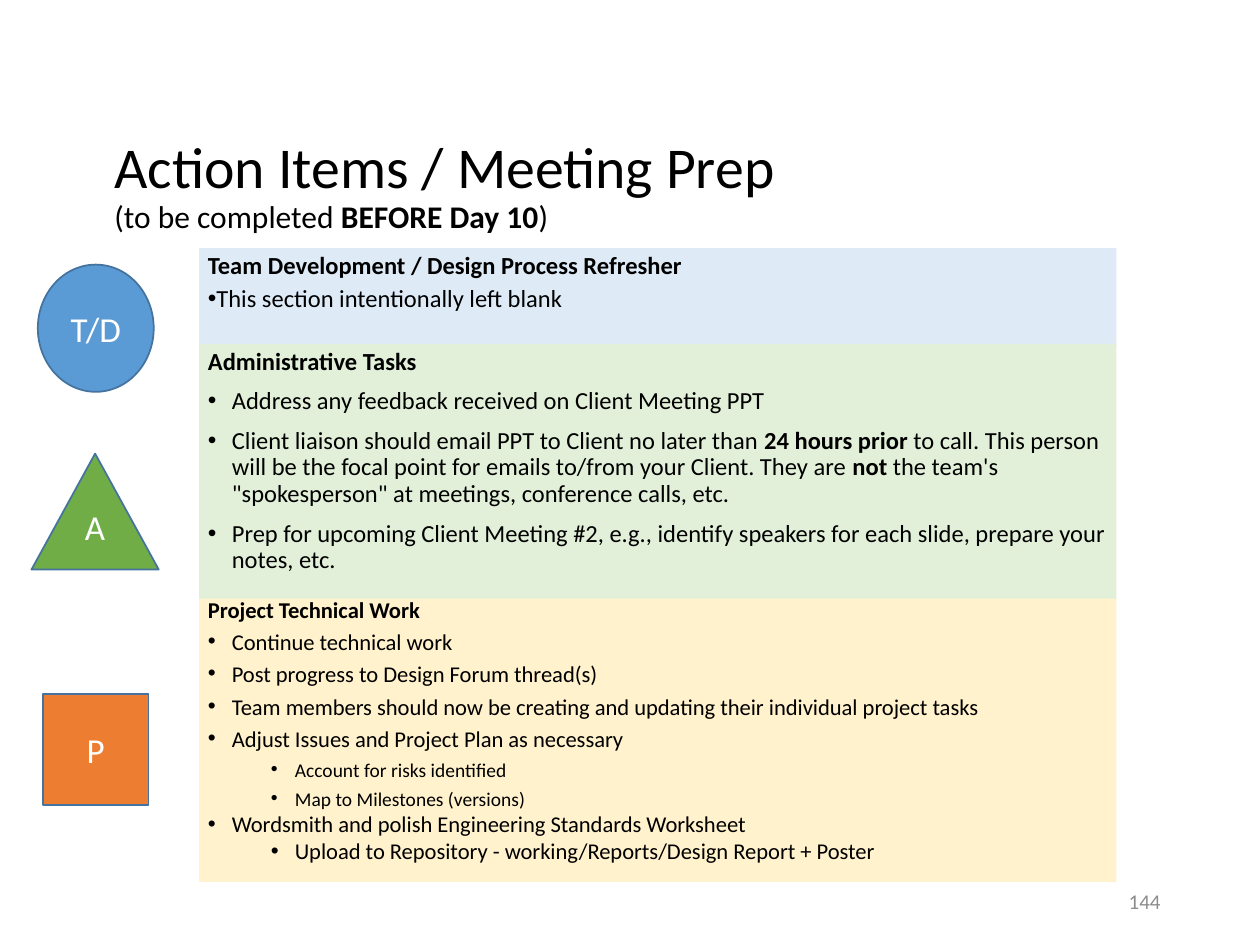
from lxml.etree import SubElement
from pptx import Presentation
from pptx.dml.color import RGBColor
from pptx.enum.shapes import MSO_SHAPE as Shape
from pptx.enum.text import MSO_ANCHOR as Anchor, PP_ALIGN as Align
from pptx.oxml.ns import qn
from pptx.util import Inches, Pt

COLUMNS, ROWS = 100, 75
SIDE_LEFT, SIDE_WIDTH = 15.8, 72.8


def color(value):
    return RGBColor.from_string(value)


class SlideBuilder:
    """Holds the style and the current slide; places are grid columns and rows."""

    font = "Calibri"
    outline = "43739E"
    panel_insets = (0.07, 0.04, 0.07, 0.04)

    def __init__(self, deck):
        self.page = deck.slides.add_slide(deck.slide_layouts[6])
        self.column = deck.slide_width / COLUMNS
        self.row = deck.slide_height / ROWS

    def place(self, left, top, width, height):
        return (round(left * self.column), round(top * self.row),
                round(width * self.column), round(height * self.row))

    def frame(self, box, anchor, insets=(0.1, 0.05, 0.1, 0.05)):
        frame = box.text_frame
        settings = {"word_wrap": True, "vertical_anchor": anchor}
        sides = ("left", "top", "right", "bottom")
        settings.update({f"margin_{side}": Inches(inset)
                         for side, inset in zip(sides, insets)})
        for name, value in settings.items():
            setattr(frame, name, value)
        return frame

    def add_text(self, para, text, size, fill="000000"):
        """Add text to a paragraph; parts between ** marks are bold."""
        for index, part in enumerate(text.split("**")):
            if part:
                span = para.add_run()
                span.text = part
                style = {"name": self.font, "size": Pt(size), "bold": index % 2 == 1}
                for name, value in style.items():
                    setattr(span.font, name, value)
                span.font.color.rgb = color(fill)

    def shape(self, kind, place, fill, line=None):
        box = self.page.shapes.add_shape(kind, *self.place(*place))
        box.shadow.inherit = False
        box.fill.solid()
        box.fill.fore_color.rgb = color(fill)
        if line:
            box.line.color.rgb = color(line)
            box.line.width = Pt(1)
        else:
            box.line.fill.background()
        return box

    def textbox(self, place):
        box = self.page.shapes.add_textbox(*self.place(*place))
        return self.frame(box, Anchor.MIDDLE).paragraphs[0]

    def title(self, place, heading, subtitle):
        para = self.textbox(place)
        para.line_spacing = 0.9
        self.add_text(para, heading, 33)
        para.add_line_break()
        self.add_text(para, subtitle, 18)

    def page_number(self, place, text):
        para = self.textbox(place)
        para.alignment = Align.RIGHT
        self.add_text(para, text, 12, "8C8C8C")

    def badge(self, kind, place, fill, label, **options):
        box = self.shape(kind, place, fill, self.outline)
        para = self.frame(box, Anchor.MIDDLE, **options).paragraphs[0]
        para.alignment = Align.CENTER
        self.add_text(para, label, 20, "FFFFFF")

    def panel(self, top, height, fill, items, size, spacing):
        box = self.shape(Shape.RECTANGLE, (SIDE_LEFT, top, SIDE_WIDTH, height), fill)
        frame = self.frame(box, Anchor.TOP, self.panel_insets)
        for index, (text, changes) in enumerate(items):
            style = {"size": size, "level": 0, "indent": 0.19,
                     "line_spacing": spacing, "before": 7.5, **changes}
            para = frame.add_paragraph() if index else frame.paragraphs[0]
            settings = {"alignment": Align.LEFT, "level": style["level"],
                        "line_spacing": style["line_spacing"],
                        "space_before": Pt(style["before"])}
            for name, value in settings.items():
                setattr(para, name, value)
            if index:
                self.bullet(para, style["indent"])
            self.add_text(para, text, style["size"])

    def bullet(self, para, indent):
        properties = para._p.get_or_add_pPr()
        properties.set("marL", str(Inches(indent)))
        properties.set("indent", str(Inches(-0.19)))
        SubElement(properties, qn("a:buFont")).set("typeface", "Arial")
        SubElement(properties, qn("a:buChar")).set("char", "•")


TEAM = [
    ("**Team Development / Design Process Refresher**", {}),
    ("This section intentionally left blank", {"indent": 0.06, "before": 3.8}),
]
ADMINISTRATIVE = [
    ("**Administrative Tasks**", {}),
    ("Address any feedback received on Client Meeting PPT", {}),
    ("Client liaison should email PPT to Client no later than **24 hours prior** to call. "
     "This person will be the focal point for emails to/from your Client. "
     "They are **not** the team's \"spokesperson\" at meetings, conference calls, etc.", {}),
    ("Prep for upcoming Client Meeting #2, e.g., identify speakers for each slide, "
     "prepare your notes, etc.", {}),
]
DETAIL = {"level": 1, "indent": 0.69, "size": 11.1}
TIGHT = {"line_spacing": 1.0, "before": 0}
TECHNICAL = [
    ("**Project Technical Work**", {}),
    ("Continue technical work", {}),
    ("Post progress to Design Forum thread(s)", {}),
    ("Team members should now be creating and updating their individual project tasks", {}),
    ("Adjust Issues and Project Plan as necessary", {}),
    ("Account for risks identified", DETAIL),
    ("Map to Milestones (versions)", DETAIL),
    ("Wordsmith and polish Engineering Standards Worksheet", TIGHT),
    ("Upload to Repository - working/Reports/Design Report + Poster",
     {**TIGHT, "level": 2, "indent": 0.69}),
]


def main():
    deck = Presentation()
    deck.slide_width, deck.slide_height = Inches(10), Inches(7.5)
    slide = SlideBuilder(deck)

    # Heading
    slide.title((8.1, 10, 86.2, 9.7), "Action Items / Meeting Prep",
                "(to be completed **BEFORE Day 10**)")

    # Task panels, stacked
    slide.panel(19.7, 7.8, "DEEBF7", TEAM, 14, 0.9)
    slide.panel(27.3, 20.3, "E2F0D9", ADMINISTRATIVE, 14, 0.9)
    slide.panel(47.5, 22.5, "FFF2CC", TECHNICAL, 12.9, 0.7)

    # Badges beside the panels; the triangle's label is raised by its insets
    slide.badge(Shape.OVAL, (3, 21, 9.2, 10.1), "5B9BD5", "T/D", insets=(0, 0.05, 0, 0.05))
    slide.badge(Shape.ISOSCELES_TRIANGLE, (2.5, 36, 10.1, 9.2), "70AD47", "A",
                insets=(0.1, 0, 0.1, 0.22))
    slide.badge(Shape.RECTANGLE, (3.4, 55.1, 8.4, 8.8), "ED7D31", "P")

    # Footer
    slide.page_number((70.6, 69.5, 22.5, 4), "144")
    deck.save("out.pptx")


if __name__ == "__main__":
    main()
